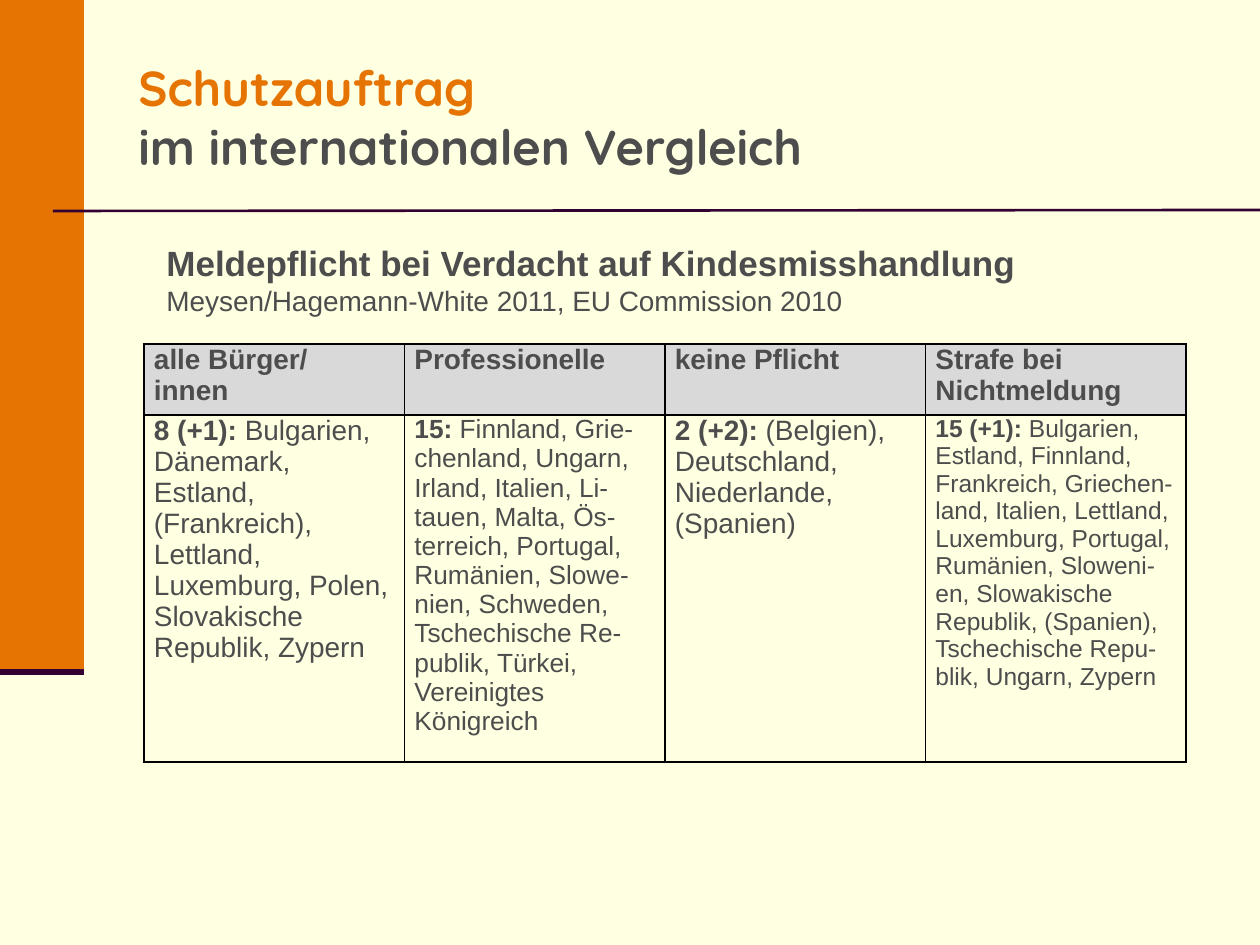
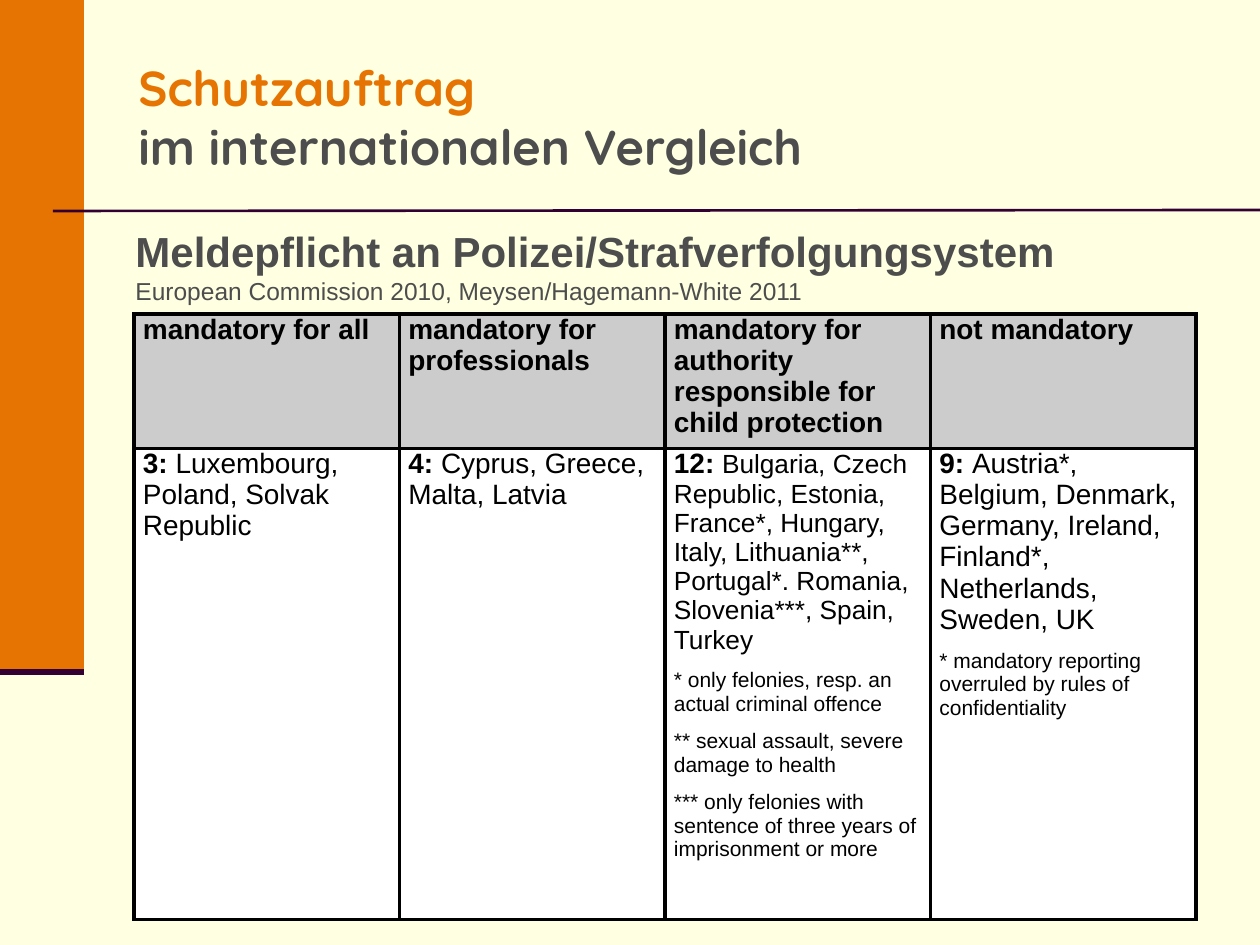
from dataclasses import dataclass

import lxml.etree
import pptx
import pptx.dml.color
import pptx.enum.shapes
import pptx.enum.text
import pptx.oxml
import pptx.oxml.ns
import pptx.util

PX_PER_INCH = 126
CREAM, ORANGE, PLUM, GREY = "FFFFE1", "E67402", "330033", "4D4D4D"
BLACK, WHITE = "000000", "FFFFFF"
BODY_FONT, TITLE_FONT = "Arial", "Quicksand"


@dataclass(frozen=True)
class Span:
    text: str
    size: int
    bold: bool = False
    color: str = GREY


@dataclass(frozen=True)
class Box:
    left: int
    top: int
    width: int
    height: int


Paragraph = list[Span]
Cell = list[Paragraph]


@dataclass(frozen=True)
class Grid:
    box: Box
    header_height: int
    inset: int
    border: float
    header_fill: str
    body_fill: str | None
    headers: list[Cell]
    bodies: list[Cell]


@dataclass(frozen=True)
class Page:
    subtitle_box: Box
    subtitle: Paragraph
    grid: Grid


def px(n: int) -> int:
    return pptx.util.Emu(round(n * 914400 / PX_PER_INCH))


def rgb(color: str) -> pptx.dml.color.RGBColor:
    return pptx.dml.color.RGBColor.from_string(color)


def place(box: Box) -> tuple[int, ...]:
    return px(box.left), px(box.top), px(box.width), px(box.height)


def style(font, span: Span, fields: list[str]) -> None:
    """Set the named fields of a span on a paragraph's or run's font."""
    if "size" in fields:
        font.size = pptx.util.Pt(span.size)
    if "bold" in fields:
        font.bold = span.bold
    if "color" in fields:
        font.color.rgb = rgb(span.color)


def write(p, spans: Paragraph, font_name: str) -> None:
    """Write spans; what they share goes on the paragraph, the rest on runs."""
    fields = ["size", "bold", "color"]
    shared = [f for f in fields if len({getattr(x, f) for x in spans}) == 1]
    p.font.name = font_name
    style(p.font, spans[0], shared)
    for span in spans:
        for i, line in enumerate(span.text.split("\n")):
            if i:
                p.add_line_break()
            if line:
                r = p.add_run()
                r.text = line
                style(r.font, span, [f for f in fields if f not in shared])


def add_text(s, box: Box, spans: Paragraph, font_name: str) -> None:
    tf = s.shapes.add_textbox(*place(box)).text_frame
    tf.word_wrap = True
    tf.vertical_anchor = pptx.enum.text.MSO_ANCHOR.MIDDLE
    write(tf.paragraphs[0], spans, font_name)


def add_line(s, x1: int, y1: int, x2: int, y2: int, width: float) -> None:
    line = s.shapes.add_connector(
        pptx.enum.shapes.MSO_CONNECTOR.STRAIGHT, px(x1), px(y1), px(x2), px(y2))
    line.line.color.rgb = rgb(PLUM)
    line.line.width = pptx.util.Pt(width)
    lxml.etree.SubElement(line._element.spPr, pptx.oxml.ns.qn("a:effectLst"))


def add_frame(s) -> None:
    """Draw the background, side band, rules and title of every slide."""
    s.background.fill.solid()
    s.background.fill.fore_color.rgb = rgb(CREAM)
    band = s.shapes.add_shape(
        pptx.enum.shapes.MSO_SHAPE.RECTANGLE, *place(Box(0, 0, 84, 672)))
    band.shadow.inherit = False
    band.fill.solid()
    band.fill.fore_color.rgb = rgb(ORANGE)
    band.line.fill.background()
    add_line(s, 53, 211, 1260, 210, 1.5)
    add_line(s, 0, 672, 84, 672, 3.5)
    title = [Span("Schutzauftrag\n", 28, True, ORANGE),
             Span("im internationalen Vergleich", 28, True)]
    add_text(s, Box(126, 38, 871, 157), title, TITLE_FONT)


def add_borders(cell, width: float) -> None:
    tc_pr = cell._tc.get_or_add_tcPr()
    for side in ("lnL", "lnR", "lnT", "lnB"):
        tc_pr.append(pptx.oxml.parse_xml(
            f'<a:{side} {pptx.oxml.ns.nsdecls("a")} w="{pptx.util.Pt(width)}">'
            f'<a:solidFill><a:srgbClr val="{BLACK}"/></a:solidFill></a:{side}>'))


def fill_cell(cell, content: Cell, fill: str | None, grid: Grid) -> None:
    cell.margin_left = cell.margin_right = px(grid.inset)
    cell.margin_top = cell.margin_bottom = 0
    add_borders(cell, grid.border)
    if fill:
        cell.fill.solid()
        cell.fill.fore_color.rgb = rgb(fill)
    else:
        cell.fill.background()
    tf = cell.text_frame
    for i, spans in enumerate(content):
        p = tf.add_paragraph() if i else tf.paragraphs[0]
        p.space_before = pptx.util.Pt(4 if i else 0)
        p.space_after = pptx.util.Pt(4)
        write(p, spans, BODY_FONT)


def add_grid(s, grid: Grid) -> None:
    columns = len(grid.headers)
    table = s.shapes.add_table(2, columns, *place(grid.box)).table
    table.first_row = table.horz_banding = False
    for column in table.columns:
        column.width = px(grid.box.width) // columns
    table.rows[0].height = px(grid.header_height)
    table.rows[1].height = px(grid.box.height - grid.header_height)
    rows = [(grid.headers, grid.header_fill), (grid.bodies, grid.body_fill)]
    for i, (contents, fill) in enumerate(rows):
        for j, content in enumerate(contents):
            fill_cell(table.cell(i, j), content, fill, grid)


def headers(color: str, *texts: str) -> list[Cell]:
    return [[[Span(text, 16, True, color)]] for text in texts]


def countries(count: str, names: str, size: int, color: str = GREY,
              count_size: int | None = None) -> Paragraph:
    return [Span(f"{count}: ", count_size or size, True, color),
            Span(names, size, False, color)]


def footnote(text: str) -> Paragraph:
    return [Span(text, 12, False, BLACK)]


SUSPICION = Page(
    Box(154, 234, 881, 90),
    [Span("Meldepflicht bei Verdacht auf Kindesmisshandlung\n", 20, True),
     Span("Meysen/Hagemann-White 2011, EU Commission 2010", 16)],
    Grid(
        Box(144, 344, 1042, 418), 71, 10, 1, "D9D9D9", None,
        headers(GREY, "alle Bürger/\ninnen", "Professionelle", "keine Pflicht",
                "Strafe bei Nichtmeldung"),
        [[countries("8 (+1)", "Bulgarien, Dänemark, Estland, (Frankreich), Lettland, "
                    "Luxemburg, Polen, Slovakische Republik, Zypern", 16)],
         [countries("15", "Finnland, Grie-chenland, Ungarn, Irland, Italien, Li-tauen, "
                    "Malta, Ös-terreich, Portugal, Rumänien, Slowe-nien, Schweden, "
                    "Tschechische Re-publik, Türkei, Vereinigtes Königreich", 15)],
         [countries("2 (+2)", "(Belgien), Deutschland, Niederlande, (Spanien)", 16)],
         [countries("15 (+1)", "Bulgarien, Estland, Finnland, Frankreich, "
                    "Griechen-land, Italien, Lettland, Luxemburg, Portugal, Rumänien, "
                    "Sloweni-en, Slowakische Republik, (Spanien), "
                    "Tschechische Repu-blik, Ungarn, Zypern", 14)]]))

POLICE = Page(
    Box(123, 219, 954, 93),
    [Span("Meldepflicht an Polizei/Strafverfolgungsystem\n", 24, True),
     Span("European Commission 2010, Meysen/Hagemann-White 2011", 14)],
    Grid(
        Box(134, 314, 1062, 605), 134, 9, 2.25, "CCCCCC", WHITE,
        headers(BLACK, "mandatory for all", "mandatory for professionals",
                "mandatory for authority responsible for child protection",
                "not mandatory"),
        [[countries("3", "Luxembourg, Poland, Solvak Republic", 16, BLACK)],
         [countries("4", "Cyprus, Greece, Malta, Latvia", 16, BLACK)],
         [countries("12", "Bulgaria, Czech Republic, Estonia, France*, Hungary, Italy, "
                    "Lithuania**, Portugal*. Romania, Slovenia***, Spain, Turkey",
                    15, BLACK, 16),
          footnote("* only felonies, resp. an actual criminal offence"),
          footnote("** sexual assault, severe damage to health"),
          footnote("*** only felonies with sentence of three years of "
                   "imprisonment or more")],
         [countries("9", "Austria*, Belgium, Denmark, Germany, Ireland, Finland*, "
                    "Netherlands, Sweden, UK", 16, BLACK),
          footnote("* mandatory reporting overruled by rules of confidentiality")]]))


def main() -> None:
    prs = pptx.Presentation()
    prs.slide_width, prs.slide_height = px(1260), px(945)
    for page in (SUSPICION, POLICE):
        s = prs.slides.add_slide(prs.slide_layouts[6])
        add_frame(s)
        add_text(s, page.subtitle_box, page.subtitle, BODY_FONT)
        add_grid(s, page.grid)
    prs.save("out.pptx")


if __name__ == "__main__":
    main()
